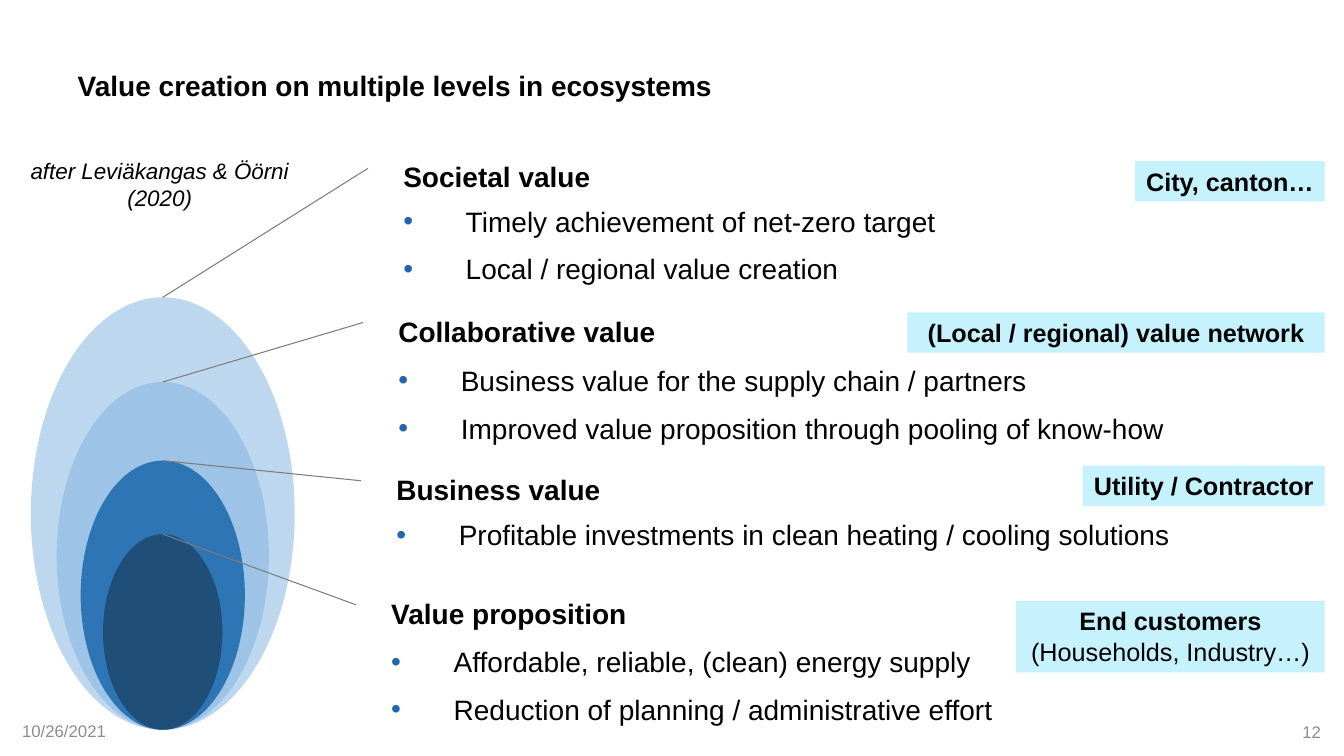
from dataclasses import dataclass

from lxml.etree import SubElement
from pptx import Presentation
from pptx.dml.color import RGBColor
from pptx.enum.shapes import MSO_CONNECTOR, MSO_SHAPE
from pptx.enum.text import MSO_ANCHOR, MSO_AUTO_SIZE, PP_ALIGN
from pptx.oxml.ns import qn
from pptx.shapes.base import BaseShape
from pptx.slide import Slide
from pptx.text.text import TextFrame
from pptx.util import Inches, Pt

WIDTH, HEIGHT = Inches(13.33), Inches(7.5)
FONT = "Arial"
COLORS = {
    "text": "000000",
    "footer": "8C8C8C",
    "bullet": "2266AB",
    "line": "7C7C7C",
    "tag": "C6F2FE",
}
CENTER, BOTTOM, ASPECT = 12.11, 96.53, 0.61
TAG_RIGHT = 98.57
HEADING_HEIGHT, LIST_HEIGHT = 8.53, 14.27
HANGING = 4.65


@dataclass(frozen=True)
class Box:
    left: float
    top: float
    width: float
    height: float


@dataclass(frozen=True)
class Level:
    heading: str
    bullets: str
    left: float
    heading_top: float
    list_top: float
    width: float
    ellipse_height: float
    color: str
    tag: str
    tag_top: float
    tag_width: float
    tag_height: float = 5.33


@dataclass(frozen=True)
class Caption:
    text: str
    box: Box
    size: float
    color: str
    align: PP_ALIGN
    anchor: MSO_ANCHOR
    italic: bool = False


LEVELS = [
    Level("Societal value",
          "Timely achievement of net-zero target\nLocal / regional value creation",
          27.38, 18, 23.87, 46.29, 57.2, "BDD7EE",
          "City, canton…", 21.33, 14.1),
    Level("Collaborative value",
          "Business value for the supply chain / partners\n"
          "Improved value proposition through pooling of know-how",
          27.01, 38.4, 44.93, 63.32, 46, "9DC3E6",
          "(Local / regional) value network", 41.33, 31.06),
    Level("Business value",
          "Profitable investments in clean heating / cooling solutions",
          26.86, 59.33, 65.33, 63.32, 35.6, "2E75B6",
          "Utility / Contractor", 61.6, 18),
    Level("Value proposition",
          "Affordable, reliable, (clean) energy supply\n"
          "Reduction of planning / administrative effort",
          26.48, 75.73, 82.13, 50.04, 25.87, "1F4E79",
          "End customers\n(Households, Industry…)", 79.47, 22.96, 9.47),
]
CAPTIONS = [
    Caption("after Leviäkangas & Öörni (2020)", Box(-0.83, 20.13, 25.43, 8.53),
            16, "text", PP_ALIGN.CENTER, MSO_ANCHOR.TOP, True),
    Caption("10/26/2021", Box(0.9, 94, 22.51, 5.33),
            12, "footer", PP_ALIGN.LEFT, MSO_ANCHOR.MIDDLE),
    Caption("12", Box(76.52, 94.13, 22.51, 5.33),
            12, "footer", PP_ALIGN.RIGHT, MSO_ANCHOR.MIDDLE),
]


def col(share: float) -> int:
    return round(WIDTH * share / 100)


def row(share: float) -> int:
    return round(HEIGHT * share / 100)


def place(sp: BaseShape, box: Box) -> None:
    sp.left, sp.top = col(box.left), row(box.top)
    sp.width, sp.height = col(box.width), row(box.height)


def format_text(tf: TextFrame, size: float, color: str = "text", bold: bool = False,
                italic: bool = False, align: PP_ALIGN = PP_ALIGN.LEFT,
                anchor: MSO_ANCHOR = MSO_ANCHOR.TOP, wrap: bool = True) -> None:
    tf.word_wrap = wrap
    tf.auto_size = MSO_AUTO_SIZE.NONE
    tf.vertical_anchor = anchor
    for p in tf.paragraphs:
        p.alignment = align
        for r in p.runs:
            r.font.name, r.font.size = FONT, Pt(size)
            r.font.bold, r.font.italic = bold, italic
            r.font.color.rgb = RGBColor.from_string(COLORS[color])


def space_text(tf: TextFrame) -> None:
    tf.margin_left = tf.margin_right = Inches(0.35)
    tf.margin_top = tf.margin_bottom = Inches(0.22)
    for p in tf.paragraphs:
        p.line_spacing = 1.05
        p.space_before, p.space_after = Pt(0), Pt(8.8)


def add_bullets(tf: TextFrame) -> None:
    for p in tf.paragraphs:
        pPr = p._p.get_or_add_pPr()
        pPr.set("marL", str(col(HANGING)))
        pPr.set("indent", str(-col(HANGING)))
        clr = SubElement(pPr, qn("a:buClr"))
        SubElement(clr, qn("a:srgbClr"), val=COLORS["bullet"])
        SubElement(pPr, qn("a:buFont"), typeface=FONT)
        SubElement(pPr, qn("a:buChar"), char="•")


def add_filled(s: Slide, kind: MSO_SHAPE, box: Box, color: str) -> BaseShape:
    sp = s.shapes.add_shape(kind, 0, 0, 0, 0)
    place(sp, box)
    sp.shadow.inherit = False
    sp.fill.solid()
    sp.fill.fore_color.rgb = RGBColor.from_string(color)
    sp.line.fill.background()
    return sp


def add_text(s: Slide, text: str, box: Box) -> TextFrame:
    sp = s.shapes.add_textbox(0, 0, 0, 0)
    place(sp, box)
    sp.text_frame.text = text
    return sp.text_frame


def add_ellipse(s: Slide, level: Level) -> None:
    width = level.ellipse_height * ASPECT * HEIGHT / WIDTH
    box = Box(CENTER - width / 2, BOTTOM - level.ellipse_height, width, level.ellipse_height)
    add_filled(s, MSO_SHAPE.OVAL, box, level.color)


def add_leader(s: Slide, level: Level) -> None:
    line = s.shapes.add_connector(
        MSO_CONNECTOR.STRAIGHT,
        col(level.left), row(level.heading_top + HEADING_HEIGHT / 2),
        col(CENTER), row(BOTTOM - level.ellipse_height))
    line.line.color.rgb = RGBColor.from_string(COLORS["line"])
    line.line.width = Pt(0.75)
    SubElement(line._element.spPr, qn("a:effectLst"))


def add_level_text(s: Slide, level: Level, body: BaseShape) -> None:
    tf = add_text(s, level.heading,
                  Box(level.left, level.heading_top, level.width, HEADING_HEIGHT))
    format_text(tf, 20, bold=True)
    space_text(tf)

    place(body, Box(level.left, level.list_top, level.width, LIST_HEIGHT))
    tf = body.text_frame
    tf.text = level.bullets
    add_bullets(tf)
    format_text(tf, 20)
    space_text(tf)


def add_tag(s: Slide, level: Level) -> None:
    box = Box(TAG_RIGHT - level.tag_width, level.tag_top, level.tag_width, level.tag_height)
    tf = add_filled(s, MSO_SHAPE.RECTANGLE, box, COLORS["tag"]).text_frame
    tf.text = level.tag
    format_text(tf, 18, bold=True, align=PP_ALIGN.CENTER, wrap=False)
    for p in tf.paragraphs[1:]:
        p.runs[0].font.bold = False


def main() -> None:
    prs = Presentation()
    prs.slide_width, prs.slide_height = WIDTH, HEIGHT
    s = prs.slides.add_slide(prs.slide_layouts.get_by_name("Comparison"))

    title, *bodies = s.placeholders
    place(title, Box(5.03, 2.93, 76.89, 16.67))
    title.text_frame.text = "Value creation on multiple levels in ecosystems"
    format_text(title.text_frame, 20, bold=True, anchor=MSO_ANCHOR.MIDDLE)

    for level in LEVELS:
        add_ellipse(s, level)
    for level, body in zip(LEVELS, bodies):
        add_leader(s, level)
        add_level_text(s, level, body)
        add_tag(s, level)
    for c in CAPTIONS:
        format_text(add_text(s, c.text, c.box), c.size, c.color,
                    italic=c.italic, align=c.align, anchor=c.anchor)
    prs.save("out.pptx")


if __name__ == "__main__":
    main()
